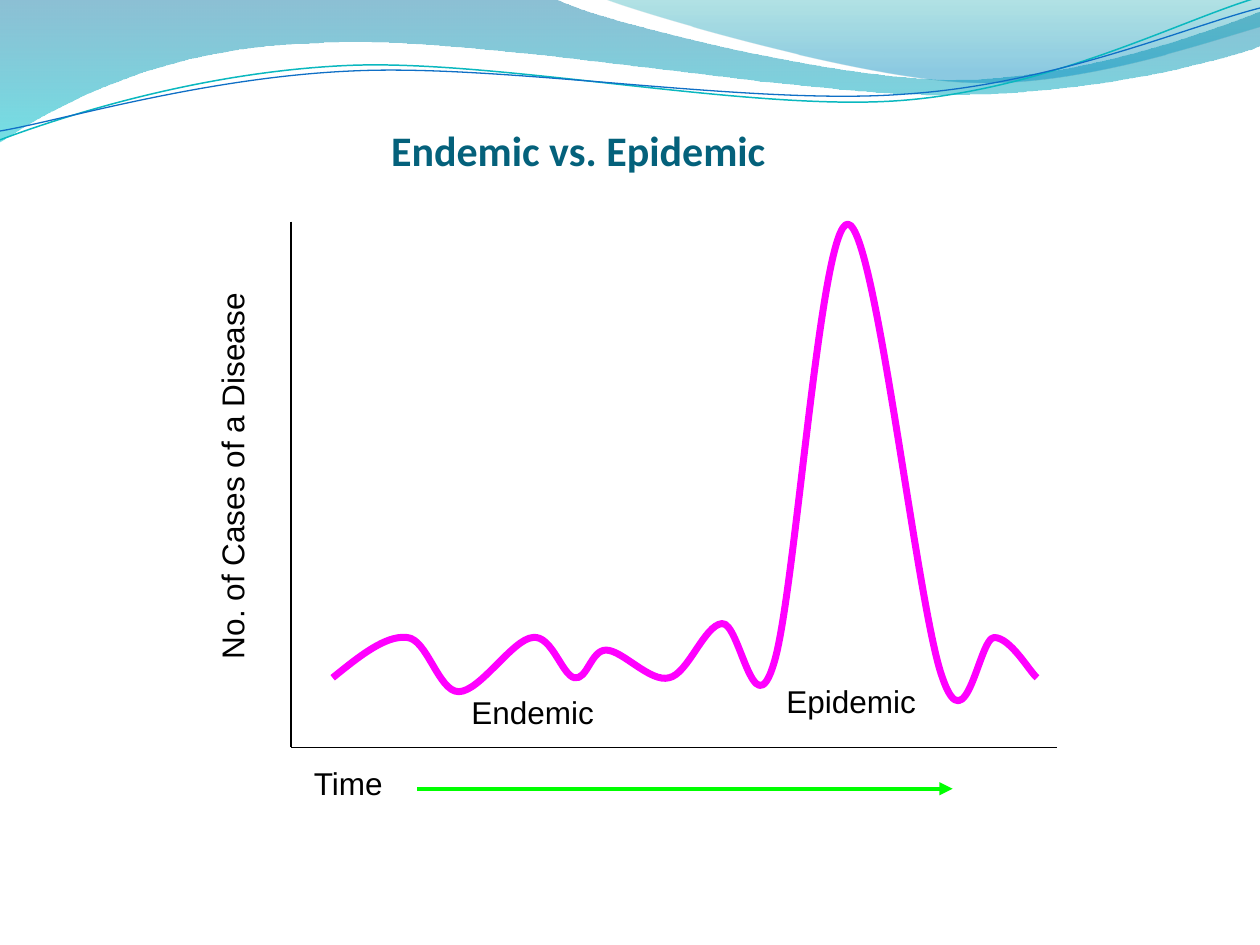
from itertools import pairwise

from lxml.etree import SubElement
from pptx import Presentation
from pptx.dml.color import RGBColor
from pptx.enum.shapes import MSO_CONNECTOR as Connector
from pptx.enum.text import MSO_ANCHOR as Anchor, MSO_AUTO_SIZE as AutoSize, PP_ALIGN as Align
from pptx.oxml.ns import qn
from pptx.util import Inches, Pt

COLUMNS, ROWS = 100, 75


def color(hex_string):
    return RGBColor.from_string(hex_string)


def bend(shape, steps):
    """Join the line segments of each six-number step into one cubic curve."""
    segments = iter(list(shape._element.iter(qn("a:lnTo"))))
    for step in steps:
        first = next(segments)
        if len(step) == 6:
            first.tag = qn("a:cubicBezTo")
            for _ in range(2):
                segment = next(segments)
                first.append(segment[0])
                segment.getparent().remove(segment)


class SlideBuilder:
    """Styles and draws elements on a grid of COLUMNS by ROWS."""

    label_font, label_size, label_color = "Arial", 18, "000000"
    title_font, title_size, title_color = "Calibri", 24, "04617B"

    def __init__(self, deck):
        self.slide = deck.slides.add_slide(deck.slide_layouts[5])
        self.shapes = self.slide.shapes
        self.column = deck.slide_width / COLUMNS
        self.row = deck.slide_height / ROWS

    def place(self, column, row):
        return round(column * self.column), round(row * self.row)

    def title(self, text, left, top, width, height):
        heading = self.shapes.title
        heading.left, heading.top = self.place(left, top)
        heading.width, heading.height = self.place(width, height)
        frame = heading.text_frame
        frame.text = text
        frame.auto_size = AutoSize.NONE
        frame.vertical_anchor = Anchor.BOTTOM
        frame.paragraphs[0].alignment = Align.CENTER
        self.format(frame, self.title_font, self.title_size, self.title_color, True)
        self.shapes._spTree.append(heading._element)

    def label(self, text, left, top, width, height=4, rotation=0):
        box = self.shapes.add_textbox(*self.place(left, top), *self.place(width, height))
        box.rotation = rotation
        frame = box.text_frame
        frame.word_wrap = True
        frame.text = text
        self.format(frame, self.label_font, self.label_size, self.label_color)

    def format(self, frame, name, size, hex_string, bold=False):
        font = frame.paragraphs[0].runs[0].font
        font.name, font.size, font.bold = name, Pt(size), bold
        font.color.rgb = color(hex_string)

    def outline(self, start, steps, closed):
        """Draw from start; a step is a point (line) or three points (curve)."""
        builder = self.shapes.build_freeform(*self.place(*start))
        vertices = [self.place(*point) for step in steps
                    for point in zip(step[::2], step[1::2])]
        builder.add_line_segments(vertices, close=closed)
        shape = builder.convert_to_shape()
        shape.shadow.inherit = False
        bend(shape, steps)
        return shape

    def curve(self, points, hex_string, width, rotation=0):
        start, *steps = points
        shape = self.outline(start, steps, closed=False)
        shape.rotation = rotation
        shape.fill.background()
        self.stroke(shape.line, hex_string, width)

    def wave(self, points, stops):
        """Fill an outline downwards; a stop is (position, colour, opacity %)."""
        start, *steps = points
        shape = self.outline(start, steps, closed=True)
        shape.line.fill.background()
        shape.fill.gradient()
        shape.fill.gradient_angle = 270
        for stop, (position, hex_string, _) in zip(shape.fill.gradient_stops, stops):
            stop.position = position
            stop.color.rgb = color(hex_string)
        for tint, (_, _, opacity) in zip(shape._element.iter(qn("a:srgbClr")), stops):
            SubElement(tint, qn("a:alpha")).set("val", str(opacity * 1000))

    def line(self, start, end, hex_string, width, arrow=False):
        connector = self.shapes.add_connector(
            Connector.STRAIGHT, *self.place(*start), *self.place(*end))
        self.stroke(connector.line, hex_string, width)
        properties = connector._element.spPr
        if arrow:
            SubElement(properties.find(qn("a:ln")), qn("a:tailEnd")).set("type", "triangle")
        SubElement(properties, qn("a:effectLst"))

    def stroke(self, line, hex_string, width):
        line.color.rgb = color(hex_string)
        line.width = Pt(width)


LEFT_WAVE = [
    (0, 0), (44, -0.1),
    (47.6, 1.7, 66.4, 6.3, 75.8, 6.3), (85.3, 6.3, 95.8, 2.6, 100, 0.9),
    (100.1, 3.6),
    (98.3, 4.4, 87, 7.6, 74.6, 7.5), (62.2, 7.5, 38.2, 2.8, 25.7, 3.4),
    (12.9, 3.6, 4.6, 8.3, -0.1, 11.3),
]
RIGHT_WAVE = [
    (47.9, -0.1),
    (50.9, 1.1, 68.2, 6.2, 76.9, 6.5), (85.6, 6.9, 96.1, 3.2, 100, 2.1),
    (100, 0),
]
RIPPLE_TILT = 357.3
TEAL_RIPPLE = [
    (-0.2, 8.75),
    (4.6, 7.2, 15.8, 4.1, 27.7, 4.15), (39.5, 4.2, 59.2, 9.3, 71.2, 9),
    (83.2, 8.7, 94, 3.6, 100.1, 2.15),
]
BLUE_RIPPLE = [
    (-0.2, 8.05),
    (4.5, 7.5, 16.4, 4.5, 28.3, 4.6), (40.3, 4.65, 59.6, 8.85, 71.6, 8.5),
    (83.6, 8.3, 94.3, 4.2, 100.2, 3),
]
CASES = [
    (26.4, 53.8),
    (28.5, 52.1, 30.6, 50.4, 32.3, 50.6), (33.9, 50.7, 34.8, 54.9, 36.4, 54.9),
    (38.1, 54.9, 40.7, 50.7, 42.3, 50.6), (43.8, 50.4, 44.6, 53.6, 45.6, 53.8),
    (46.6, 54, 46.9, 51.6, 48.1, 51.6), (49.4, 51.6, 51.6, 54.2, 53.1, 53.8),
    (54.6, 53.5, 55.9, 49.6, 57.3, 49.5), (58.7, 49.3, 59.8, 58, 61.4, 52.7),
    (63.1, 47.5, 65.1, 17.6, 67.3, 17.8), (69.5, 18, 72.8, 48.4, 74.8, 53.8),
    (76.7, 59.3, 77.7, 50.6, 78.9, 50.6), (80.2, 50.6, 81.7, 53.3, 82.3, 53.8),
]
AXES = [(23.1, 17.6), (23.1, 59.3), (83.9, 59.3)]


def main():
    deck = Presentation()
    deck.slide_width, deck.slide_height = Inches(10), Inches(7.5)
    slide = SlideBuilder(deck)

    slide.wave(LEFT_WAVE, [(0, "0074A1", 45), (1, "00C6CF", 55)])
    slide.wave(RIGHT_WAVE, [(0, "00A1A9", 30), (0.8, "008BBF", 45)])
    slide.curve(TEAL_RIPPLE, "0AB8BF", 0.85, RIPPLE_TILT)
    slide.curve(BLUE_RIPPLE, "0F6FC6", 0.75, RIPPLE_TILT)

    slide.title("Endemic vs. Epidemic", 16.05, 10.9, 59.7, 3.5)

    for start, end in pairwise(AXES):
        slide.line(start, end, "000000", 0.75)
    slide.curve(CASES, "FF00FF", 4)

    slide.label("Endemic", 36.43, 54.5, 15.8)
    slide.label("Epidemic", 61.43, 53.66, 15.8)
    slide.label("No. of Cases of a Disease", -0.3, 32.6, 37.4, rotation=270)
    slide.label("Time", 23.93, 60.14, 10.8)
    slide.line((33.1, 62.6), (75.6, 62.6), "00FF00", 2.5, arrow=True)

    deck.save("out.pptx")


if __name__ == "__main__":
    main()
